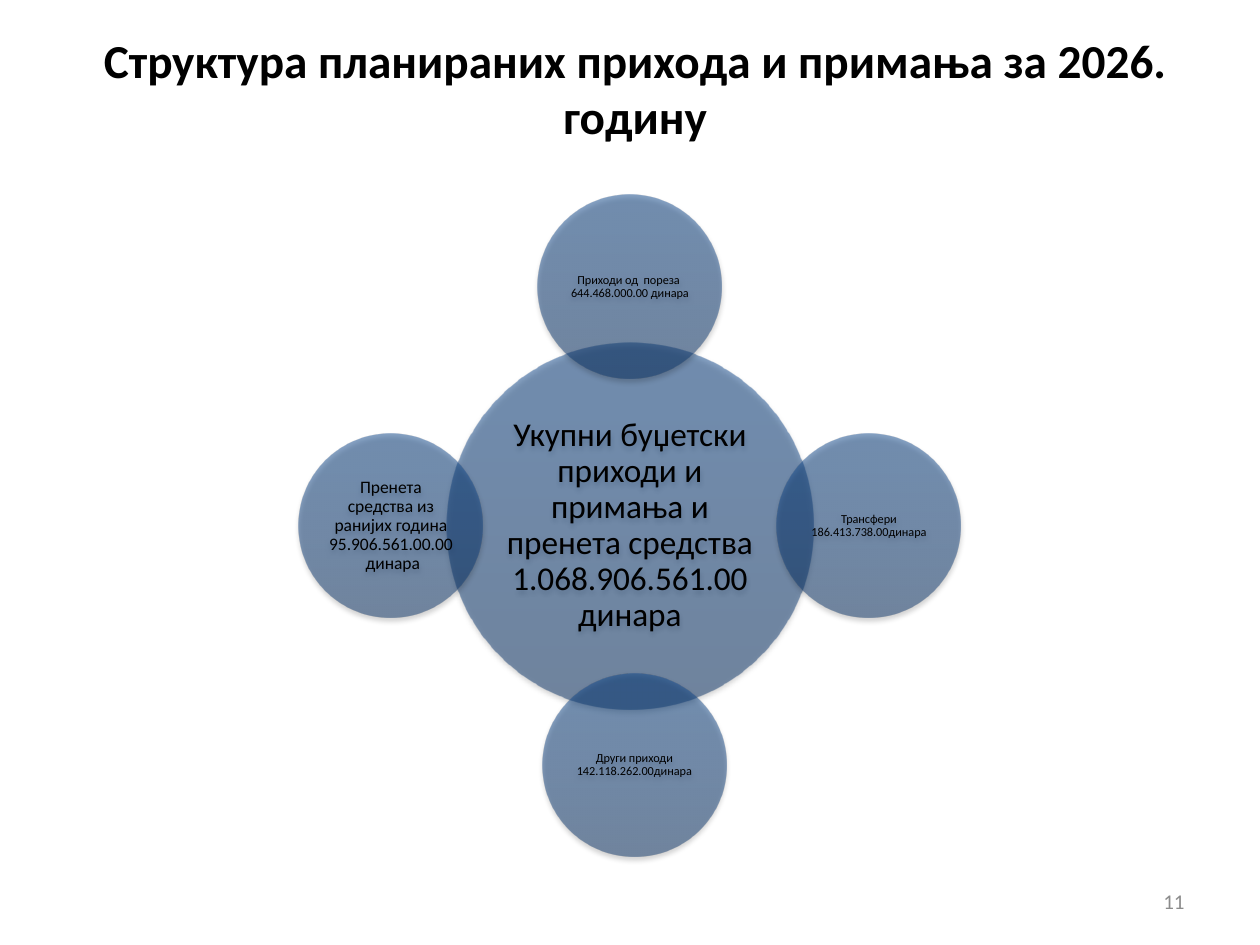
import pptx
import pptx.util
import pptx.oxml
import pptx.dml.color
import pptx.enum.shapes
import pptx.enum.text
from pptx.oxml.ns import nsdecls

Pt = pptx.util.Pt
ALIGN = pptx.enum.text.PP_ALIGN
MIDDLE = pptx.enum.text.MSO_ANCHOR.MIDDLE

# Content
TITLE = "Структура планираних прихода и примања за 2026. годину"
PAGE = "11"
TOTAL = "Укупни буџетски приходи и примања и пренета средства 1.068.906.561.00 динара"
# text, size, direction from the centre (x, y), sideways nudge
PARTS = [
    ("Приходи од  пореза  644.468.000.00 динара", 7, (0, -1), 0),
    ("Трансфери 186.413.738.00динара", 7, (1, 0), 0),
    ("Други приходи 142.118.262.00динара", 7, (0, 1), 2.5),
    ("Пренета средства из ранијих година 95.906.561.00.00  динара", 10, (-1, 0), 0),
]

# Look
COLORS = {"text": "000000", "page": "8C8C8C", "shadow": "000000",
          "low": "0D3568", "mid": "104587", "high": "0E458A"}
STOPS = [(0, "low"), (80, "mid"), (100, "high")]
CX, CY, ORBIT = 360, 300.6, 136.6
BIG, SMALL = 209.6, 105


def write(sp, text, size, color="text", align=ALIGN.CENTER, inset=None, bold=False):
    tf = sp.text_frame
    frame = {"word_wrap": True, "vertical_anchor": MIDDLE}
    if inset is not None:
        for side in ("left", "top", "right", "bottom"):
            frame["margin_" + side] = Pt(inset)
    for name, value in frame.items():
        setattr(tf, name, value)
    p = tf.paragraphs[0]
    p.alignment = align
    r = p.add_run()
    r.text = text
    for name, value in {"name": "Calibri", "size": Pt(size), "bold": bold}.items():
        setattr(r.font, name, value)
    r.font.color.rgb = pptx.dml.color.RGBColor.from_string(COLORS[color])
    return p


def add_circle(s, cx, cy, d, text, size, inset):
    sp = s.shapes.add_shape(pptx.enum.shapes.MSO_SHAPE.OVAL,
                            Pt(cx - d / 2), Pt(cy - d / 2), Pt(d), Pt(d))
    # Half-transparent gradient, running upwards
    stops = "".join(
        f'<a:gs pos="{pos * 1000}"><a:srgbClr val="{COLORS[key]}">'
        '<a:alpha val="50000"/></a:srgbClr></a:gs>' for pos, key in STOPS)
    sp.element.spPr.append(pptx.oxml.parse_xml(
        f'<a:gradFill {nsdecls("a")} rotWithShape="1"><a:gsLst>{stops}</a:gsLst>'
        '<a:lin ang="16200000" scaled="0"/></a:gradFill>'))
    sp.line.fill.background()
    # Soft shadow below
    sp.shadow.inherit = False
    sp.element.spPr[-1].append(pptx.oxml.parse_xml(
        f'<a:outerShdw {nsdecls("a")} blurRad="{Pt(3.1)}" dist="{Pt(1.8)}" '
        f'dir="5400000" rotWithShape="0"><a:srgbClr val="{COLORS["shadow"]}">'
        '<a:alpha val="35000"/></a:srgbClr></a:outerShdw>'))
    p = write(sp, text, size, inset=inset)
    p.line_spacing = 0.9


def main():
    prs = pptx.Presentation()
    prs.slide_width, prs.slide_height = Pt(720), Pt(540)
    s = prs.slides.add_slide(prs.slide_layouts[5])

    # Title
    title = s.shapes.title
    box = {"left": 39, "top": 19.5, "width": 648, "height": 61}
    for name, value in box.items():
        setattr(title, name, Pt(value))
    write(title, TITLE, 27, bold=True)

    # Page number
    page = s.shapes.add_textbox(Pt(516), Pt(500.5), Pt(168), Pt(28.75))
    write(page, PAGE, 12, "page", ALIGN.RIGHT)

    # Total in the middle, its parts around it
    add_circle(s, CX, CY, BIG, TOTAL, 19, 2)
    for text, size, (dx, dy), nudge in PARTS:
        add_circle(s, CX + dx * ORBIT + nudge, CY + dy * ORBIT, SMALL, text, size, 0.75)

    prs.save("out.pptx")


if __name__ == "__main__":
    main()
